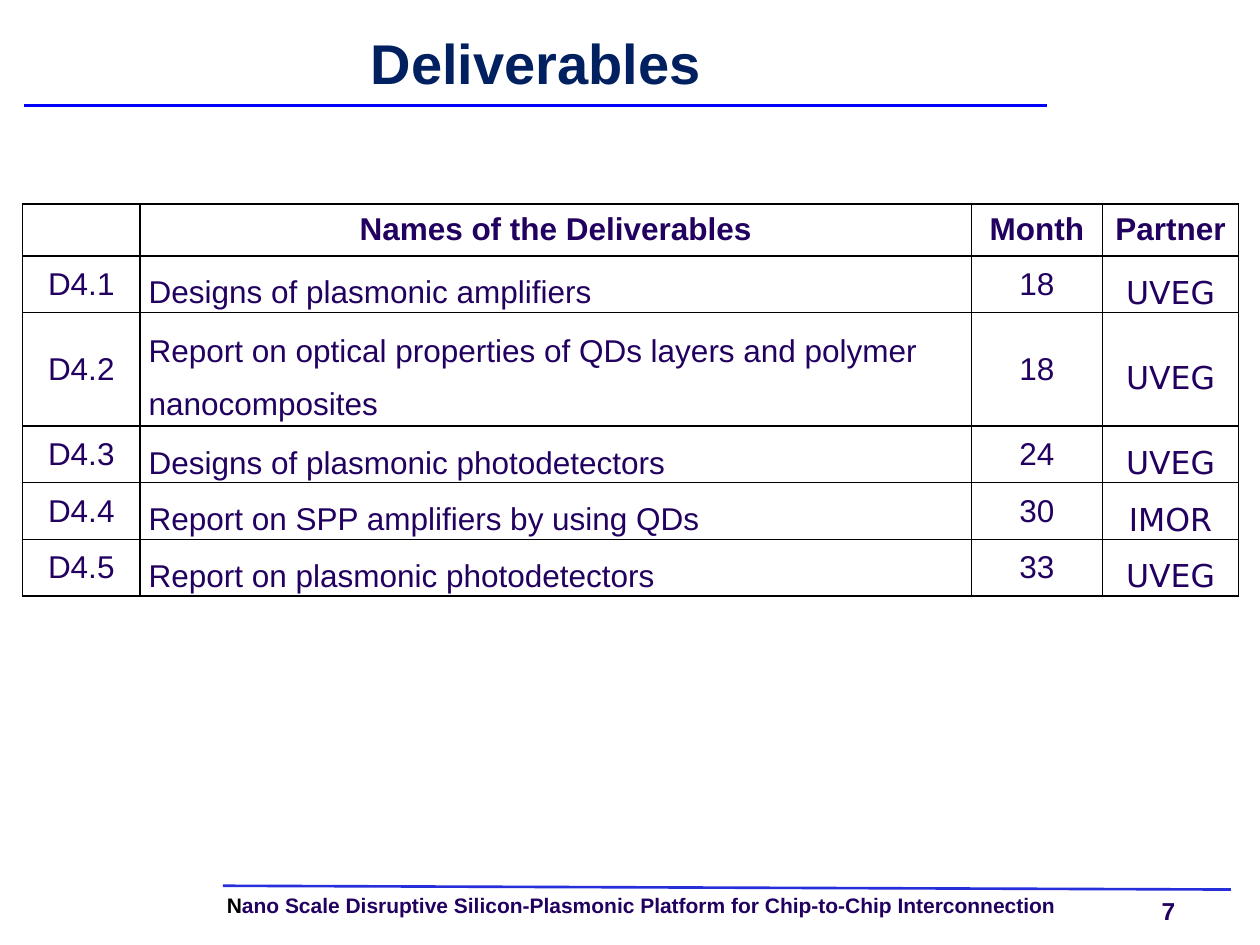
import pptx
import pptx.util
import pptx.dml.color
import pptx.enum.shapes
import pptx.enum.text
import pptx.oxml.ns
from lxml import etree

Inches, Pt = pptx.util.Inches, pptx.util.Pt
PP_ALIGN = pptx.enum.text.PP_ALIGN
MIDDLE = pptx.enum.text.MSO_ANCHOR.MIDDLE
qn = pptx.oxml.ns.qn

# Content
TITLE = "Deliverables"
HEADER = ("", "Names of the Deliverables", "Month", "Partner")
DELIVERABLES = [
    ("D4.1", "Designs of plasmonic amplifiers", "18", "UVEG"),
    ("D4.2", "Report on optical properties of QDs layers and polymer nanocomposites", "18", "UVEG"),
    ("D4.3", "Designs of plasmonic photodetectors", "24", "UVEG"),
    ("D4.4", "Report on SPP amplifiers by using QDs", "30", "IMOR"),
    ("D4.5", "Report on plasmonic photodetectors", "33", "UVEG"),
]
FOOTER_INITIAL = "N"
FOOTER_REST = "ano Scale Disruptive Silicon-Plasmonic Platform for Chip-to-Chip Interconnection"
PAGE_NUMBER = "7"

# Layout and colours
COLUMN_WIDTHS = (0.93, 6.6, 1.04, 1.08)
ROW_HEIGHT = 0.41
NAME_COLUMN, PARTNER_COLUMN = 1, 3
INK, NAVY, BLACK, WHITE = "220060", "002060", "000000", "FFFFFF"
RULES = [  # x1, y1, x2, y2, colour
    (1.77, 7.03, 9.77, 7.06, "262FDA"),
    (0.19, 0.84, 8.31, 0.84, "0000FF"),
]


def rgb(colour):
    return pptx.dml.color.RGBColor.from_string(colour)


def set_font(font, size, colour, bold=False, name="Arial"):
    font.name, font.size, font.bold = name, Pt(size), bold
    font.color.rgb = rgb(colour)


def clear_margins(frame):
    frame.margin_left = frame.margin_right = frame.margin_top = frame.margin_bottom = 0


def add_rule(slide, x1, y1, x2, y2, colour):
    rule = slide.shapes.add_connector(
        pptx.enum.shapes.MSO_CONNECTOR.STRAIGHT,
        Inches(x1), Inches(y1), Inches(x2), Inches(y2))
    rule.line.color.rgb = rgb(colour)
    rule.line.width = Pt(1.5)
    properties = rule.line._get_or_add_ln().getparent()
    etree.SubElement(properties, qn("a:effectLst"))


def add_label(slide, left, top, width, height):
    frame = slide.shapes.add_textbox(
        Inches(left), Inches(top), Inches(width), Inches(height)).text_frame
    frame.word_wrap = True
    clear_margins(frame)
    return frame.paragraphs[0]


def add_borders(cell):
    properties = cell._tc.get_or_add_tcPr()
    for position, side in enumerate(("a:lnL", "a:lnR", "a:lnT", "a:lnB")):
        border = etree.Element(qn(side), w=str(Pt(1)))
        fill = etree.SubElement(border, qn("a:solidFill"))
        etree.SubElement(fill, qn("a:srgbClr"), val=BLACK)
        properties.insert(position, border)


def fill_cell(cell, text, row, column):
    is_header = row == 0
    cell.text = text
    cell.vertical_anchor = MIDDLE
    cell.fill.solid()
    cell.fill.fore_color.rgb = rgb(WHITE)
    paragraph = cell.text_frame.paragraphs[0]
    paragraph.alignment = PP_ALIGN.CENTER
    if not is_header and column in (NAME_COLUMN, PARTNER_COLUMN):
        cell.margin_left = cell.margin_right = Inches(0.07)
        cell.margin_top = cell.margin_bottom = 0
        paragraph.line_spacing = 1.5
        if column == NAME_COLUMN:
            paragraph.alignment = PP_ALIGN.LEFT
    is_partner = not is_header and column == PARTNER_COLUMN
    set_font(paragraph.font, 18, INK, is_header, "DejaVu Sans" if is_partner else "Arial")
    add_borders(cell)


def main():
    deck = pptx.Presentation()
    deck.slide_width, deck.slide_height = Inches(10), Inches(7.5)
    slide = deck.slides.add_slide(deck.slide_layouts[5])

    # Footer and rules
    footer = add_label(slide, 1.8, 7.11, 7.14, 0.18)
    footer.line_spacing = 0.9
    for text, colour in ((FOOTER_INITIAL, BLACK), (FOOTER_REST, INK)):
        run = footer.add_run()
        run.text = text
        set_font(run.font, 12, colour, True)
    number = add_label(slide, 9.22, 7.11, 0.4, 0.23)
    number.text = PAGE_NUMBER
    set_font(number.font, 14, INK, True)
    for rule in RULES:
        add_rule(slide, *rule)

    # Title
    title = slide.shapes.title
    title.left, title.top = Inches(0.2), Inches(0.2)
    title.width, title.height = Inches(8.11), Inches(0.67)
    frame = title.text_frame
    frame.text = TITLE
    frame.vertical_anchor = MIDDLE
    clear_margins(frame)
    heading = frame.paragraphs[0]
    heading.alignment = PP_ALIGN.CENTER
    heading.line_spacing = Pt(32)
    set_font(heading.font, 32, NAVY, True)

    # Deliverables table
    rows = [HEADER] + DELIVERABLES
    table = slide.shapes.add_table(
        len(rows), len(HEADER), Inches(0.18), Inches(1.62),
        Inches(sum(COLUMN_WIDTHS)), Inches(ROW_HEIGHT * len(rows))).table
    for column, width in zip(table.columns, COLUMN_WIDTHS):
        column.width = Inches(width)
    for r, row in enumerate(rows):
        table.rows[r].height = Inches(ROW_HEIGHT)
        for c, text in enumerate(row):
            fill_cell(table.cell(r, c), text, r, c)

    deck.save("out.pptx")


if __name__ == "__main__":
    main()
